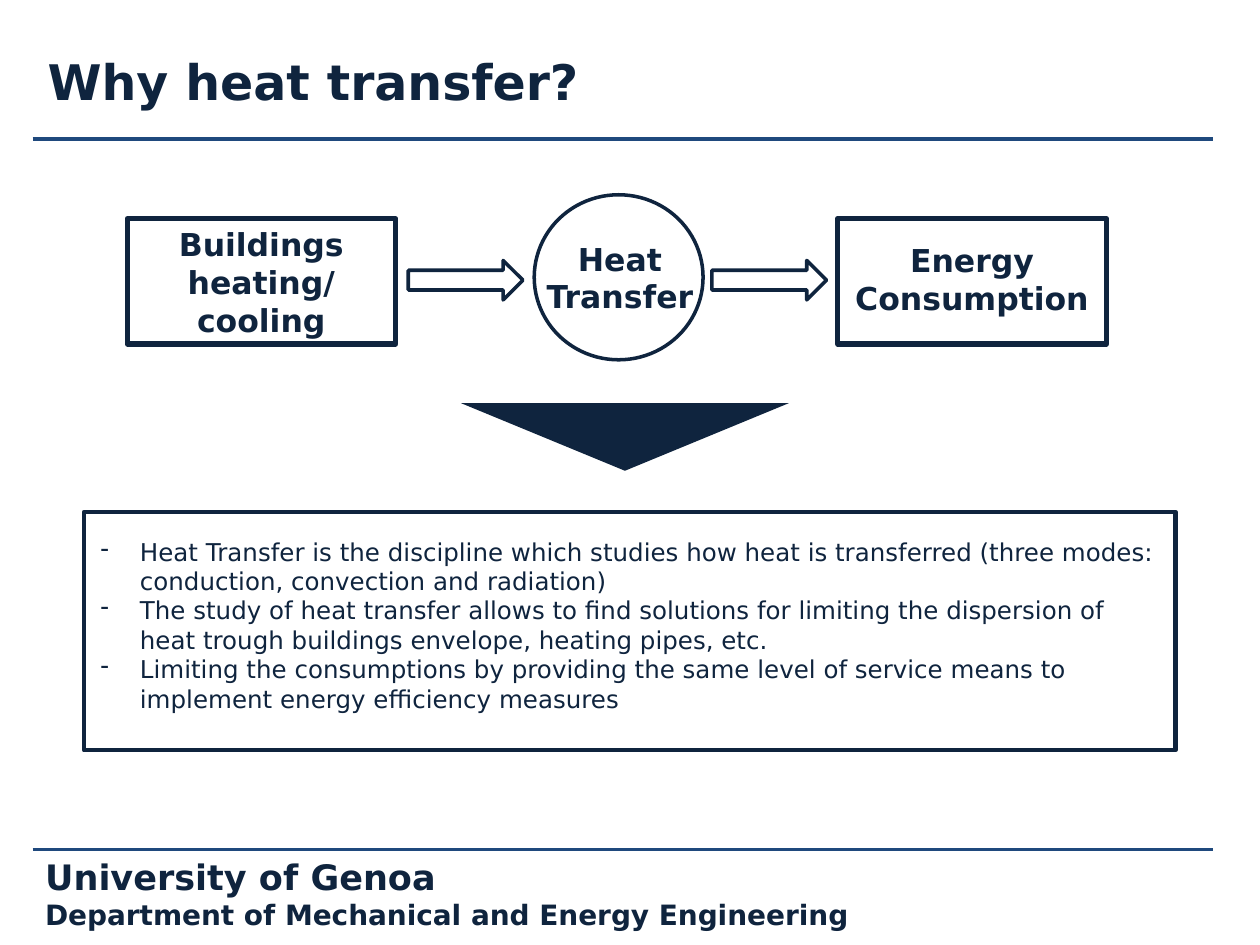
import dataclasses
import typing

import pptx
import pptx.dml.color
import pptx.enum.shapes
import pptx.enum.text
import pptx.oxml
import pptx.oxml.ns
import pptx.util

Pt = pptx.util.Pt
ShapeType = pptx.enum.shapes.MSO_SHAPE
Align = pptx.enum.text.PP_ALIGN
Anchor = pptx.enum.text.MSO_ANCHOR
AutoSize = pptx.enum.text.MSO_AUTO_SIZE

COLOURS = {"navy": "0F243E", "rule": "1F497D"}
FONT = "DejaVu Sans"
BULLET_INDENT = 22.5


@dataclasses.dataclass
class Box:
    left: float
    top: float
    width: float
    height: float

    def lengths(self) -> list:
        return [Pt(value) for value in dataclasses.astuple(self)]


@dataclasses.dataclass
class Outline:
    kind: typing.Any
    box: Box
    weight: float


@dataclasses.dataclass
class Line:
    text: str
    size: float
    bold: bool = True


@dataclasses.dataclass
class TextBlock:
    box: Box
    lines: list[Line]
    align: typing.Any = Align.LEFT
    anchor: typing.Any = Anchor.TOP
    auto_size: typing.Any = AutoSize.SHAPE_TO_FIT_TEXT
    bullet: str = ""


def colour(name: str) -> pptx.dml.color.RGBColor:
    return pptx.dml.color.RGBColor.from_string(COLOURS[name])


def apply_format(target: typing.Any, values: dict) -> None:
    for name, value in values.items():
        setattr(target, name, value)


def draw_rule(slide: typing.Any, y: float) -> None:
    rule = slide.shapes.add_connector(
        pptx.enum.shapes.MSO_CONNECTOR.STRAIGHT, Pt(18.7), Pt(y), Pt(693.4), Pt(y))
    rule.line.color.rgb = colour("rule")
    rule.line.width = Pt(2)
    rule._element.spPr.append(pptx.oxml.parse_xml(
        f"<a:effectLst {pptx.oxml.ns.nsdecls('a')}/>"))


def draw_outline(slide: typing.Any, outline: Outline) -> None:
    shape = slide.shapes.add_shape(outline.kind, *outline.box.lengths())
    shape.shadow.inherit = False
    shape.fill.background()
    shape.line.color.rgb = colour("navy")
    shape.line.width = Pt(outline.weight)


def draw_pointer(slide: typing.Any, box: Box) -> None:
    shape = slide.shapes.add_shape(ShapeType.ISOSCELES_TRIANGLE, *box.lengths())
    shape.shadow.inherit = False
    shape.rotation = 180
    shape.fill.solid()
    shape.fill.fore_color.rgb = colour("navy")
    shape.line.fill.background()


def add_bullet(paragraph: typing.Any, character: str) -> None:
    properties = paragraph._p.get_or_add_pPr()
    properties.set("marL", str(Pt(BULLET_INDENT)))
    properties.set("indent", str(-Pt(BULLET_INDENT)))
    properties.append(pptx.oxml.parse_xml(
        f"<a:buChar {pptx.oxml.ns.nsdecls('a')} char=\"{character}\"/>"))


def draw_text(slide: typing.Any, block: TextBlock) -> None:
    frame = slide.shapes.add_textbox(*block.box.lengths()).text_frame
    apply_format(frame, {"word_wrap": True, "auto_size": block.auto_size,
                         "vertical_anchor": block.anchor})
    for index, line in enumerate(block.lines):
        paragraph = frame.add_paragraph() if index else frame.paragraphs[0]
        paragraph.alignment = block.align
        if block.bullet:
            add_bullet(paragraph, block.bullet)
        run = paragraph.add_run()
        run.text = line.text
        apply_format(run.font, {"name": FONT, "size": Pt(line.size), "bold": line.bold})
        run.font.color.rgb = colour("navy")


# Title, footer and the rules beside them
RULES = [79.3, 485.4]
FRAME_TEXTS = [
    TextBlock(Box(18.7, 492.5, 477.4, 36),
              [Line("University of Genoa", 20),
               Line("Department of Mechanical and Energy Engineering", 16)],
              anchor=Anchor.MIDDLE, auto_size=AutoSize.NONE),
    TextBlock(Box(20.2, 20.9, 674.6, 51.1), [Line("Why heat transfer?", 28)],
              anchor=Anchor.MIDDLE, auto_size=AutoSize.NONE),
]

# Flow from buildings to energy consumption
OUTLINES = [
    Outline(ShapeType.RECTANGLE, Box(72.7, 125, 153.4, 71.6), 3),
    Outline(ShapeType.OVAL, Box(305.3, 111.3, 96.5, 94.3), 2),
    Outline(ShapeType.RECTANGLE, Box(478.8, 125, 153.4, 71.6), 3),
    Outline(ShapeType.RIGHT_ARROW, Box(233.3, 148.8, 65.5, 22.6), 2),
    Outline(ShapeType.RIGHT_ARROW, Box(406.8, 148.8, 65.5, 22.6), 2),
    Outline(ShapeType.RECTANGLE, Box(48, 292.5, 623.8, 136.2), 2.5),
]
FLOW_TEXTS = [
    TextBlock(box, [Line(text, 18)], Align.CENTER)
    for box, text in [
        (Box(67.2, 125, 164.2, 72.7), "Buildings heating/ cooling"),
        (Box(302.4, 133.4, 103.7, 51.1), "Heat Transfer"),
        (Box(473.3, 134.1, 164.2, 51.1), "Energy Consumption"),
    ]
]
POINTER = Box(263.5, 230.4, 187.2, 38.6)

# Explanation below the pointer
EXPLANATION = TextBlock(
    Box(50.4, 303.1, 617, 108.7),
    [Line(text, 14, False) for text in (
        "Heat Transfer is the discipline which studies how heat is transferred "
        "(three modes: conduction, convection and radiation)",
        "The study of heat transfer allows to find solutions for limiting the "
        "dispersion of heat trough buildings envelope, heating pipes, etc.",
        "Limiting the consumptions by providing the same level of service means "
        "to implement energy efficiency measures",
    )],
    bullet="-")


def main() -> None:
    presentation = pptx.Presentation()
    apply_format(presentation, {"slide_width": Pt(720), "slide_height": Pt(540)})
    slide = presentation.slides.add_slide(presentation.slide_layouts[6])
    for y in RULES:
        draw_rule(slide, y)
    for outline in OUTLINES:
        draw_outline(slide, outline)
    draw_pointer(slide, POINTER)
    for block in [*FRAME_TEXTS, *FLOW_TEXTS, EXPLANATION]:
        draw_text(slide, block)
    presentation.save("out.pptx")


if __name__ == "__main__":
    main()
